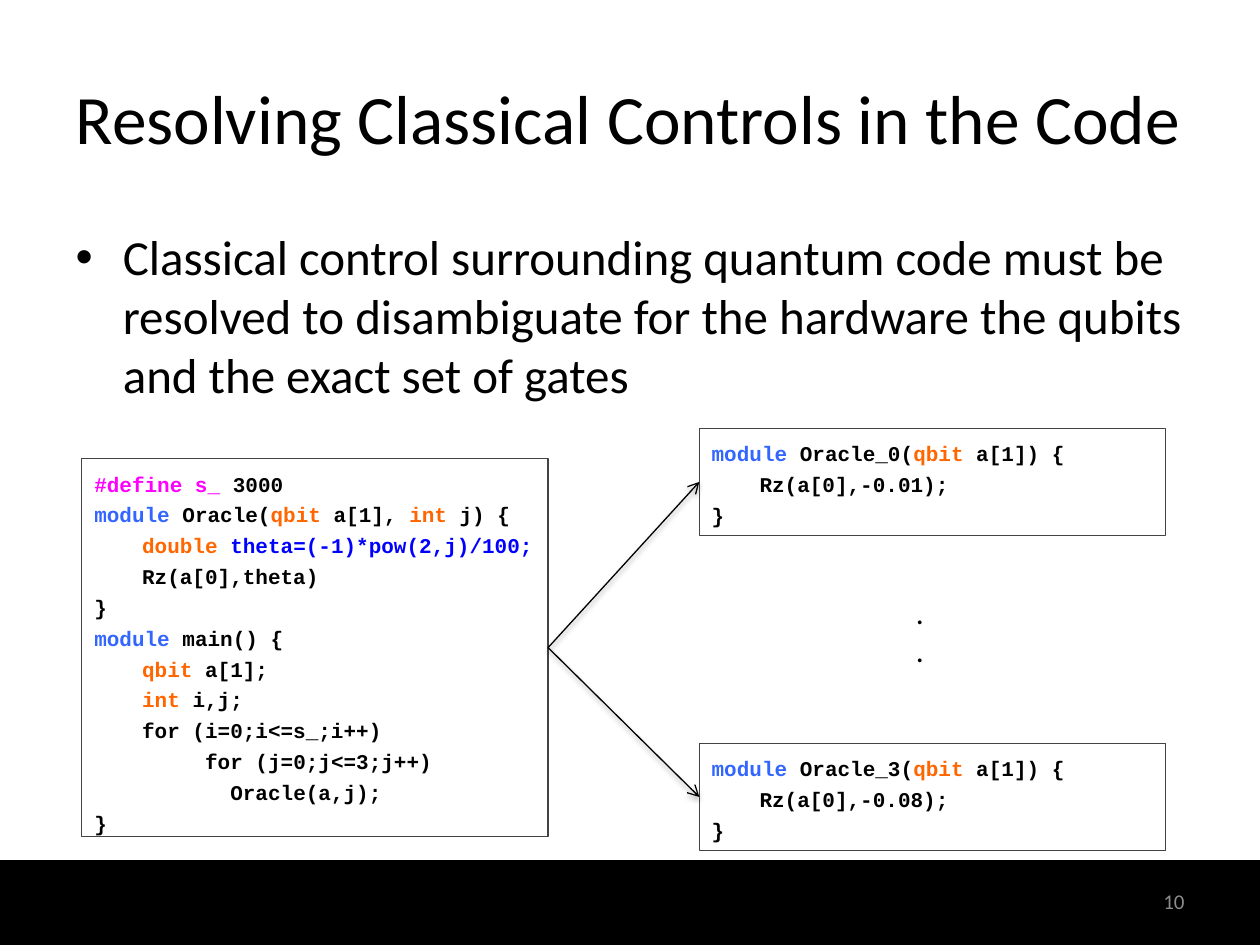
from lxml import etree
from pptx import Presentation
from pptx.dml.color import RGBColor
from pptx.enum.shapes import MSO_CONNECTOR, MSO_SHAPE
from pptx.enum.text import MSO_ANCHOR, MSO_AUTO_SIZE, PP_ALIGN
from pptx.oxml import parse_xml
from pptx.oxml.ns import nsdecls, qn
from pptx.util import Inches, Pt

THEME = {
    "text_font": "Calibri", "code_font": "Courier New",
    "title": 39.6, "body": 28, "dots": 18, "code": 12, "number": 12,
    "line": 0.75, "code_gap": 3.2,
    "plain": "000000", "macro": "FF00FF", "keyword": "3366FF",
    "type": "FF6600", "formula": "0000FF", "border": "434343", "muted": "8C8C8C",
}

TITLE = "Resolving Classical Controls in the Code"
BODY = ("Classical control surrounding quantum code must be resolved to "
        "disambiguate for the hardware the qubits and the exact set of gates")
PAGE_NUMBER = "10"
DOTS = [".", "."]

SOURCE_CODE = [
    [("#define s_ ", "macro"), ("3000", "plain")],
    [("module ", "keyword"), ("Oracle(", "plain"), ("qbit ", "type"),
     ("a[1], ", "plain"), ("int", "type"), (" j) {", "plain")],
    [("\tdouble", "type"), (" theta=(-1)*pow(2,j)/100;", "formula")],
    [("\tRz(a[0],theta)", "plain")],
    [("}", "plain")],
    [("module ", "keyword"), ("main() {", "plain")],
    [("\tqbit ", "type"), ("a[1];", "plain")],
    [("\tint", "type"), (" i,j;", "plain")],
    [("\tfor (i=0;i<=s_;i++)", "plain")],
    [("\t\tfor (j=0;j<=3;j++)", "plain")],
    [("\t\t  Oracle(a,j);", "plain")],
    [("}", "plain")],
]
RESOLVED = [("Oracle_0", "-0.01", 3.4), ("Oracle_3", "-0.08", 5.9)]


def color(role):
    return RGBColor.from_string(THEME[role])


def style(para, size, role="plain", font="text_font"):
    para.font.name = THEME[font]
    para.font.size = Pt(THEME[size])
    para.font.color.rgb = color(role)


def place(shape, left, top, width, height):
    shape.left, shape.top = Inches(left), Inches(top)
    shape.width, shape.height = Inches(width), Inches(height)


def fill_placeholder(shape, text, size, area):
    place(shape, *area)
    shape.text_frame.text = text
    shape.text_frame.auto_size = MSO_AUTO_SIZE.NONE
    style(shape.text_frame.paragraphs[0], size)


def add_text(page, lines, size, area, role="plain", align=PP_ALIGN.LEFT, wrap=True):
    box = page.shapes.add_textbox(*map(Inches, area))
    frame = box.text_frame
    frame.word_wrap = wrap
    frame.text = "\n".join(lines)
    for para in frame.paragraphs:
        para.alignment = align
        style(para, size, role)
    return frame


def add_rectangle(page, area, line_role):
    box = page.shapes.add_shape(MSO_SHAPE.RECTANGLE, *map(Inches, area))
    box.shadow.inherit = False
    box.line.color.rgb = color(line_role)
    box.line.width = Pt(THEME["line"])
    return box


def add_code(page, lines, area):
    box = add_rectangle(page, area, "border")
    box.fill.background()
    frame = box.text_frame
    frame.word_wrap = True
    frame.vertical_anchor = MSO_ANCHOR.TOP
    frame.margin_left = frame.margin_right = Inches(0.1)
    frame.margin_top = frame.margin_bottom = Inches(0.1)
    for index, line in enumerate(lines):
        para = frame.add_paragraph() if index else frame.paragraphs[0]
        para.alignment = PP_ALIGN.LEFT
        para.space_before = Pt(THEME["code_gap"])
        style(para, "code", font="code_font")
        para.font.bold = True
        properties = para._p.get_or_add_pPr()
        properties.set("marL", str(Inches(0.38)))
        properties.set("indent", str(-Inches(0.38)))
        properties.set("defTabSz", str(Inches(0.5)))
        for text, role in line:
            span = para.add_run()
            span.text = text
            span.font.color.rgb = color(role)
    return box


def add_arrow(page, source, target):
    arrow = page.shapes.add_connector(MSO_CONNECTOR.STRAIGHT, 0, 0, 0, 0)
    arrow.begin_connect(source, 3)
    arrow.end_connect(target, 1)
    arrow.line.color.rgb = color("plain")
    arrow.line.width = Pt(THEME["line"])
    etree.SubElement(arrow.line._get_or_add_ln(), qn("a:tailEnd"), type="arrow")
    arrow._element.spPr.append(parse_xml(
        f'<a:effectLst {nsdecls("a")}><a:outerShdw blurRad="{Pt(3.1)}" '
        f'dist="{Pt(1.6)}" dir="5400000" rotWithShape="0">'
        f'<a:srgbClr val="{THEME["plain"]}"><a:alpha val="38000"/></a:srgbClr>'
        '</a:outerShdw></a:effectLst>'))


def main():
    deck = Presentation()
    deck.slide_width, deck.slide_height = Inches(10), Inches(7.5)
    page = deck.slides.add_slide(deck.slide_layouts[1])

    fill_placeholder(page.shapes.title, TITLE, "title", (0.3, 0.3, 9.37, 1.25))
    fill_placeholder(page.placeholders[1], BODY, "body", (0.5, 1.75, 9, 1.65))

    band = add_rectangle(page, (0, 6.83, 10, 0.75), "plain")
    band.fill.solid()
    band.fill.fore_color.rgb = color("plain")
    number = add_text(page, [PAGE_NUMBER], "number", (7.17, 6.95, 2.33, 0.4),
                      "muted", PP_ALIGN.RIGHT)
    number.vertical_anchor = MSO_ANCHOR.MIDDLE
    dots = add_text(page, DOTS, "dots", (7.17, 4.66, 0.27, 0.71), wrap=False)
    dots.auto_size = MSO_AUTO_SIZE.SHAPE_TO_FIT_TEXT

    source = add_code(page, SOURCE_CODE, (0.65, 3.64, 3.7, 3))
    targets = []
    for name, angle, top in RESOLVED:
        lines = [
            [("module", "keyword"), (f" {name}(", "plain"), ("qbit", "type"),
             (" a[1]) {", "plain")],
            [(f"\tRz(a[0],{angle});", "plain")],
            [("}", "plain")],
        ]
        targets.append(add_code(page, lines, (5.55, top, 3.7, 0.85)))
    for target in targets:
        add_arrow(page, source, target)

    deck.save("out.pptx")


if __name__ == "__main__":
    main()
